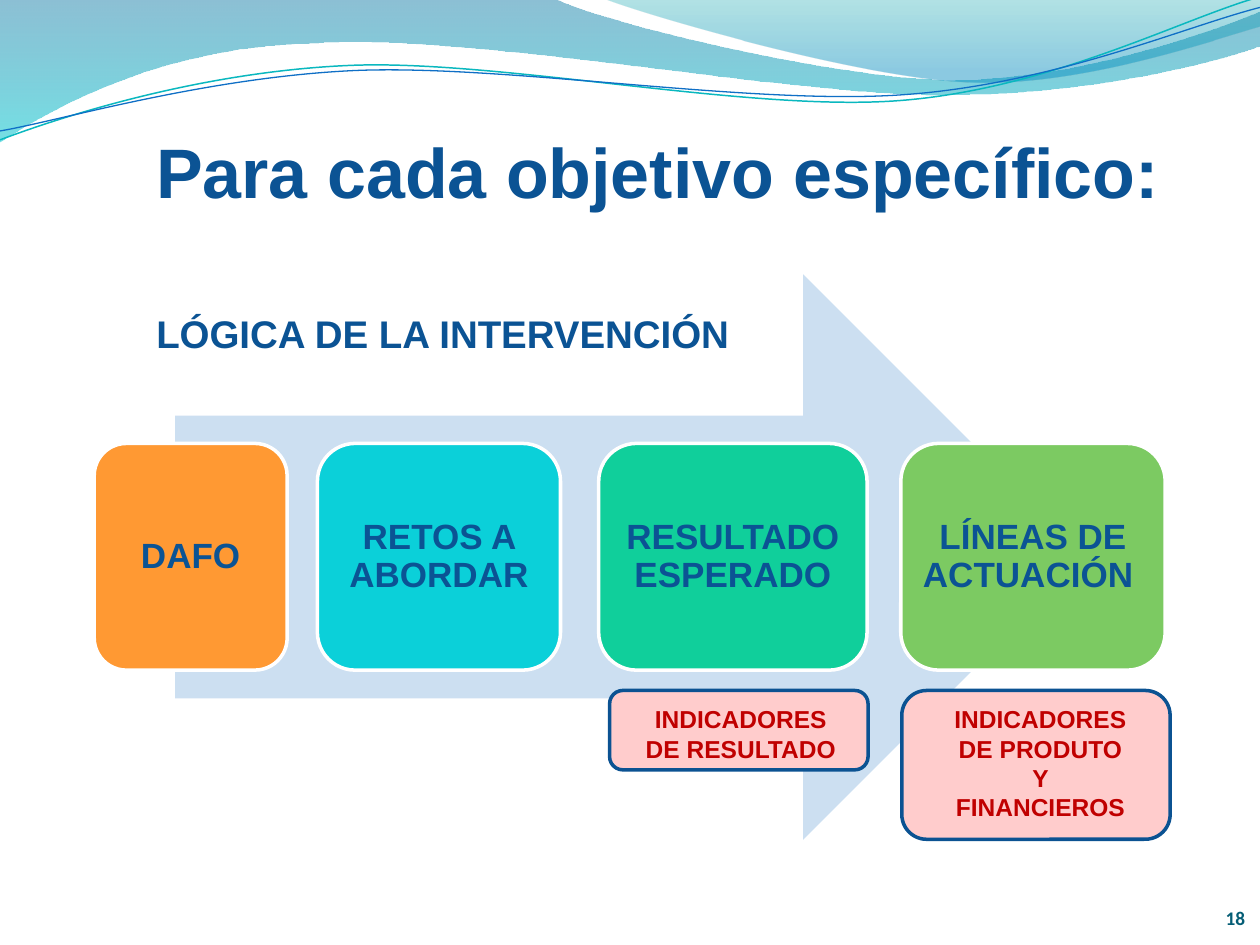
from math import cos, radians, sin

from lxml.etree import SubElement
from pptx import Presentation
from pptx.dml.color import RGBColor
from pptx.enum.shapes import MSO_SHAPE
from pptx.enum.text import MSO_ANCHOR, PP_ALIGN
from pptx.oxml.ns import qn
from pptx.util import Cm, Pt

COLORS = {
    "navy": "0B5394", "border": "0B5292", "arrow": "CCDFF1", "white": "FFFFFF",
    "orange": "FF9933", "cyan": "0BD0D9", "mint": "10CF9B", "green": "7CCA62",
    "pink": "FFCCCC", "red": "C00000", "number": "045D75",
    "teal_line": "0AB8BF", "blue_line": "0F6FC6",
    "wave_blue": "0074A1", "wave_aqua": "00C6CF",
    "crest_teal": "00A1A9", "crest_blue": "008BBF",
}

HEADING = "Para cada objetivo específico:"
SUBHEADING = "LÓGICA DE LA INTERVENCIÓN"
PAGE_NUMBER = "18"

STAGES = [
    ("DAFO", "orange", 1.9, 3.89),
    ("RETOS A ABORDAR", "cyan", 6.4, 4.9),
    ("RESULTADO ESPERADO", "mint", 12.07, 5.41),
    ("LÍNEAS DE ACTUACIÓN ", "green", 18.16, 5.33),
]
STAGE_TOP, STAGE_HEIGHT = 8.94, 4.57

INDICATORS = [
    (["INDICADORES", "DE RESULTADO"], 12.29, 5.21, 1.6, (0.08, 0.2)),
    (["INDICADORES", "DE PRODUTO", "Y", "FINANCIEROS"], 18.18, 5.41, 3.0, (0.18, 0.13)),
]
INDICATOR_TOP = 13.92

BANDS = [
    ([(0, 0), [(11.18, -0.03)],
      [(12.09, 0.43), (16.87, 1.6), (19.25, 1.6)],
      [(21.67, 1.6), (24.33, 0.66), (25.4, 0.23)], [(25.43, 0.91)],
      [(24.97, 1.12), (22.1, 1.93), (18.95, 1.91)],
      [(15.8, 1.91), (9.7, 0.71), (6.53, 0.86)],
      [(3.28, 0.91), (1.17, 2.11), (-0.03, 2.87)]],
     [(0, "wave_blue", 45), (1, "wave_aqua", 55)]),
    ([(12.17, -0.03), [(12.93, 0.28), (17.32, 1.57), (19.53, 1.65)],
      [(21.74, 1.75), (24.41, 0.81), (25.4, 0.53)], [(25.4, 0)]],
     [(0, "crest_teal", 30), (0.8, "crest_blue", 45)]),
]
STRANDS = [
    ([(0, 2.82), [(1.22, 2.36), (4.01, 1.45), (7.04, 1.32)],
      [(10.03, 1.19), (15.06, 2.26), (18.11, 2.03)],
      [(21.16, 1.8), (23.83, 0.38), (25.35, -0.05)]], "teal_line", 0.85),
    ([(0, 2.64), [(1.19, 2.44), (4.17, 1.55), (7.19, 1.42)],
      [(10.24, 1.3), (15.16, 2.13), (18.21, 1.91)],
      [(21.23, 1.7), (23.9, 0.53), (25.4, 0.15)]], "blue_line", 0.75),
]
STRAND_TILT = -2.7
STRAND_CENTER = (12.68, 1.48)


def rgb(name):
    return RGBColor.from_string(COLORS[name])


def turn(point, degrees):
    angle = radians(degrees)
    dx, dy = (value - middle for value, middle in zip(point, STRAND_CENTER))
    return (STRAND_CENTER[0] + dx * cos(angle) - dy * sin(angle),
            STRAND_CENTER[1] + dx * sin(angle) + dy * cos(angle))


def add_outline(slide, route, tilt=0):
    start, *segments = route
    points = [start] + [point for segment in segments for point in segment]
    corners = [(Cm(x), Cm(y)) for x, y in (turn(point, -tilt) for point in points)]
    builder = slide.shapes.build_freeform(*corners[0])
    builder.add_line_segments(corners[1:], close=not tilt)
    outline = builder.convert_to_shape()
    outline.shadow.inherit = False
    outline.rotation = tilt % 360
    steps = iter(list(outline._element.iter(qn("a:lnTo"))))
    for segment in segments:
        first, *others = [next(steps) for _ in segment]
        if others:
            first.tag = qn("a:cubicBezTo")
            for step in others:
                first.append(step[0])
                step.getparent().remove(step)
    return outline


def add_band(slide, route, stops):
    band = add_outline(slide, route)
    band.line.fill.background()
    band.fill.gradient()
    band.fill.gradient_angle = 270
    for stop, (position, color, opacity) in zip(band.fill.gradient_stops, stops):
        stop.position = position
        stop.color.rgb = rgb(color)
    for value, (_, _, opacity) in zip(band._element.spPr.iter(qn("a:srgbClr")), stops):
        SubElement(value, qn("a:alpha")).set("val", str(opacity * 1000))


def add_strand(slide, route, color, width):
    strand = add_outline(slide, route, STRAND_TILT)
    strand.fill.background()
    strand.line.color.rgb = rgb(color)
    strand.line.width = Pt(width)


def add_block(slide, preset, box, fill, line=None):
    block = slide.shapes.add_shape(preset, *map(Cm, box))
    block.shadow.inherit = False
    block.fill.solid()
    block.fill.fore_color.rgb = rgb(fill)
    if line:
        block.line.color.rgb = rgb(line)
        block.line.width = Pt(2)
    else:
        block.line.fill.background()
    return block


def write(holder, lines, size, color, align, anchor, margins, font="Arial", spacing=1.0):
    frame = holder.text_frame
    frame.word_wrap = True
    frame.vertical_anchor = anchor
    frame.margin_left, frame.margin_top, frame.margin_right, frame.margin_bottom = map(Cm, margins)
    for index, line in enumerate(lines):
        paragraph = frame.add_paragraph() if index else frame.paragraphs[0]
        paragraph.alignment = align
        paragraph.line_spacing = spacing
        paragraph.space_before = Pt(0)
        run = paragraph.add_run()
        run.text = line
        run.font.name = font
        run.font.size = Pt(size)
        run.font.bold = True
        run.font.color.rgb = rgb(color)


def place(holder, left, top, width, height):
    holder.left, holder.top, holder.width, holder.height = map(Cm, (left, top, width, height))


def main():
    prs = Presentation()
    prs.slide_width, prs.slide_height = Cm(25.4), Cm(19.05)
    slide = prs.slides.add_slide(prs.slide_layouts[1])

    for route, stops in BANDS:
        add_band(slide, route, stops)
    for route, color, width in STRANDS:
        add_strand(slide, route, color, width)

    heading, subheading = slide.placeholders
    place(heading, 2.9, 2.07, 22.1, 2.75)
    write(heading, [HEADING], 40, "navy", PP_ALIGN.LEFT, MSO_ANCHOR.MIDDLE, (0.25, 0.13, 0.25, 0.13))
    place(subheading, 2.9, 6.06, 13, 1.3)
    properties = subheading.text_frame.paragraphs[0]._p.get_or_add_pPr()
    properties.set("marL", "0")
    properties.set("indent", "0")
    SubElement(properties, qn("a:buNone"))
    write(subheading, [SUBHEADING], 22, "navy", PP_ALIGN.LEFT, MSO_ANCHOR.MIDDLE, (0.25, 0.13, 0.25, 0.13))

    add_block(slide, MSO_SHAPE.RIGHT_ARROW, (3.53, 5.53, 18.36, 11.4), "arrow")
    for label, fill, left, width in STAGES:
        stage = add_block(slide, MSO_SHAPE.ROUNDED_RECTANGLE,
                          (left, STAGE_TOP, width, STAGE_HEIGHT), fill, "white")
        write(stage, [label], 20, "navy", PP_ALIGN.CENTER, MSO_ANCHOR.MIDDLE, (0.2,) * 4, spacing=0.9)
    for lines, left, width, height, (inset_left, inset_top) in INDICATORS:
        indicator = add_block(slide, MSO_SHAPE.ROUNDED_RECTANGLE,
                              (left, INDICATOR_TOP, width, height), "pink", "border")
        write(indicator, lines, 14, "red", PP_ALIGN.CENTER, MSO_ANCHOR.TOP, (inset_left, inset_top, 0, 0))

    page_number = slide.shapes.add_textbox(Cm(23.91), Cm(17.93), Cm(1.19), Cm(0.81))
    write(page_number, [PAGE_NUMBER], 11, "number", PP_ALIGN.RIGHT, MSO_ANCHOR.BOTTOM, (0,) * 4, "Calibri")

    prs.save("out.pptx")


if __name__ == "__main__":
    main()
